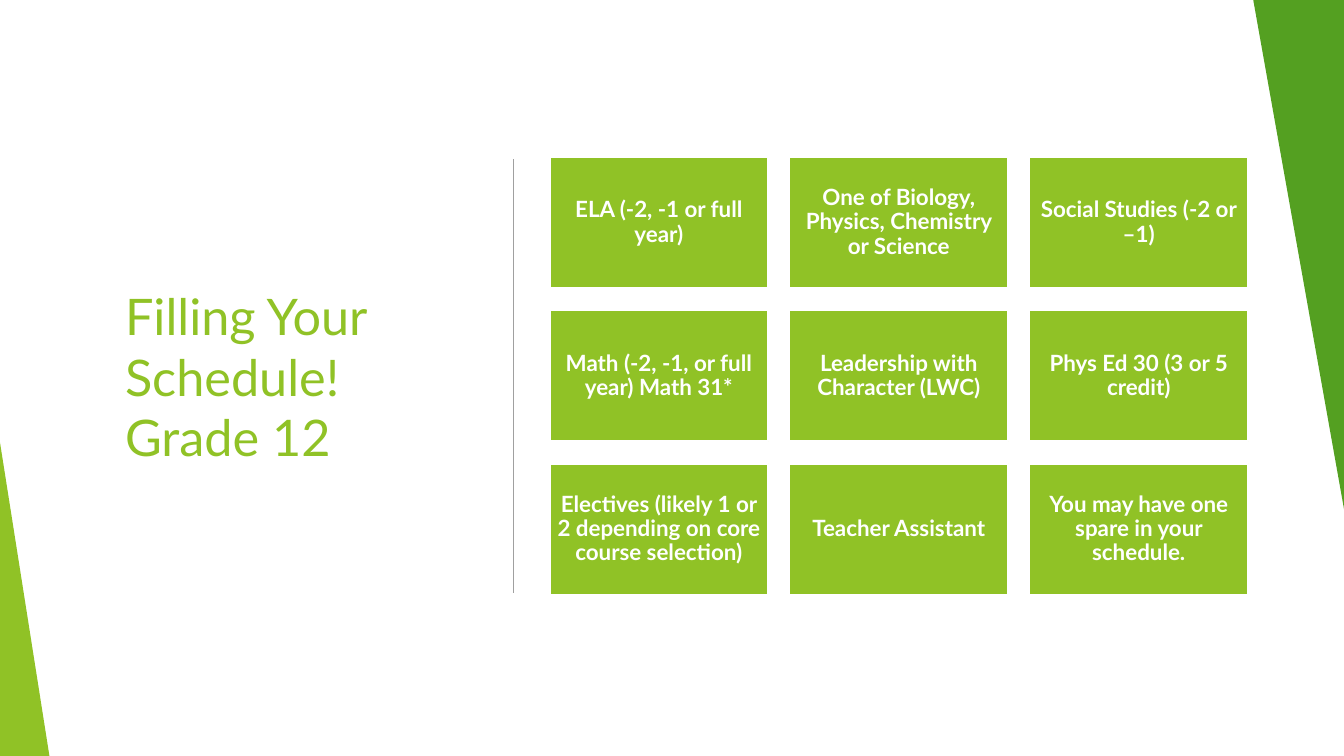
import pptx
import pptx.dml.color
import pptx.enum.shapes
import pptx.enum.text
import pptx.util
from lxml import etree
from pptx.util import Inches

# Content
TITLE_LINES = ["Filling Your Schedule!", "Grade 12"]
COURSES = [
    ["ELA (-2, -1 or full year)",
     "One of Biology, Physics, Chemistry or Science",
     "Social Studies (-2 or –1)"],
    ["Math (-2, -1, or full year) Math 31*",
     "Leadership with Character (LWC)",
     "Phys Ed 30 (3 or 5 credit)"],
    ["Electives (likely 1 or 2 depending on core course selection)",
     "Teacher Assistant",
     "You may have one spare in your schedule."],
]

THEME = {
    "font": "Lato",
    "lime": "90C226",
    "green": "54A021",
    "white": "FFFFFF",
    "rule": "A0A0A0",
    "title_size": 36,
    "course_size": 16,
}

# Layout in inches
SLIDE_W, SLIDE_H = 13.33, 7.5
GRID_LEFT, GRID_TOP = 5.45, 1.56
CARD_W, CARD_H = 2.17, 1.3
STEP_X, STEP_Y = 2.38, 1.52
CARD_INSET = 0.07
SHAPES = pptx.enum.shapes.MSO_SHAPE


def color(name):
    return pptx.dml.color.RGBColor.from_string(THEME[name])


def add_block(slide, kind, box, fill):
    block = slide.shapes.add_shape(kind, *map(Inches, box))
    block.shadow.inherit = False
    block.fill.solid()
    block.fill.fore_color.rgb = color(fill)
    block.line.fill.background()
    return block


def add_words(paragraph, words, size, tint, bold=False):
    run = paragraph.add_run()
    run.text = words
    run.font.name = THEME["font"]
    run.font.size = pptx.util.Pt(THEME[size])
    run.font.color.rgb = color(tint)
    run.font.bold = bold


def add_corner(slide, box, fill, rotation=0):
    corner = add_block(slide, SHAPES.ISOSCELES_TRIANGLE, box, fill)
    corner.adjustments[0] = 0
    corner.rotation = rotation


def add_title(slide):
    title = slide.shapes.title
    title.left, title.top, title.width, title.height = map(
        Inches, (1.14, 1.29, 3.61, 4.88))
    frame = title.text_frame
    frame.word_wrap = True
    frame.auto_size = pptx.enum.text.MSO_AUTO_SIZE.NONE
    frame.vertical_anchor = pptx.enum.text.MSO_ANCHOR.MIDDLE
    heading = frame.paragraphs[0]
    heading.alignment = pptx.enum.text.PP_ALIGN.LEFT
    for index, words in enumerate(TITLE_LINES):
        if index:
            heading.add_line_break()
        add_words(heading, words, "title_size", "lime")


def add_divider(slide):
    divider = slide.shapes.add_connector(
        pptx.enum.shapes.MSO_CONNECTOR.STRAIGHT,
        *map(Inches, (5.09, 1.58, 5.09, 5.88)))
    divider.line.color.rgb = color("rule")
    divider.line.width = pptx.util.Pt(0.75)
    etree.SubElement(divider.element.spPr, pptx.oxml.ns.qn("a:effectLst"))


def add_course(slide, row, column, words):
    box = (GRID_LEFT + column * STEP_X, GRID_TOP + row * STEP_Y, CARD_W, CARD_H)
    card = add_block(slide, SHAPES.RECTANGLE, box, "lime")
    card.line.color.rgb = color("white")
    card.line.width = pptx.util.Pt(1.5)
    frame = card.text_frame
    frame.word_wrap = True
    frame.vertical_anchor = pptx.enum.text.MSO_ANCHOR.MIDDLE
    frame.margin_left = frame.margin_right = Inches(CARD_INSET)
    frame.margin_top = frame.margin_bottom = Inches(CARD_INSET)
    course = frame.paragraphs[0]
    course.alignment = pptx.enum.text.PP_ALIGN.CENTER
    course.line_spacing = 0.9
    add_words(course, words, "course_size", "white", bold=True)


def main():
    deck = pptx.Presentation()
    deck.slide_width, deck.slide_height = Inches(SLIDE_W), Inches(SLIDE_H)
    slide = deck.slides.add_slide(deck.slide_layouts[5])

    # Title, left corner and dividing rule
    add_title(slide)
    add_corner(slide, (0, 4.39, 0.49, 3.11), "lime")
    add_divider(slide)

    # Course grid
    for row, courses in enumerate(COURSES):
        for column, words in enumerate(courses):
            add_course(slide, row, column, words)

    # Right corner
    add_corner(slide, (12.43, 0, 0.9, 5.05), "green", rotation=180)

    deck.save("out.pptx")


if __name__ == "__main__":
    main()
